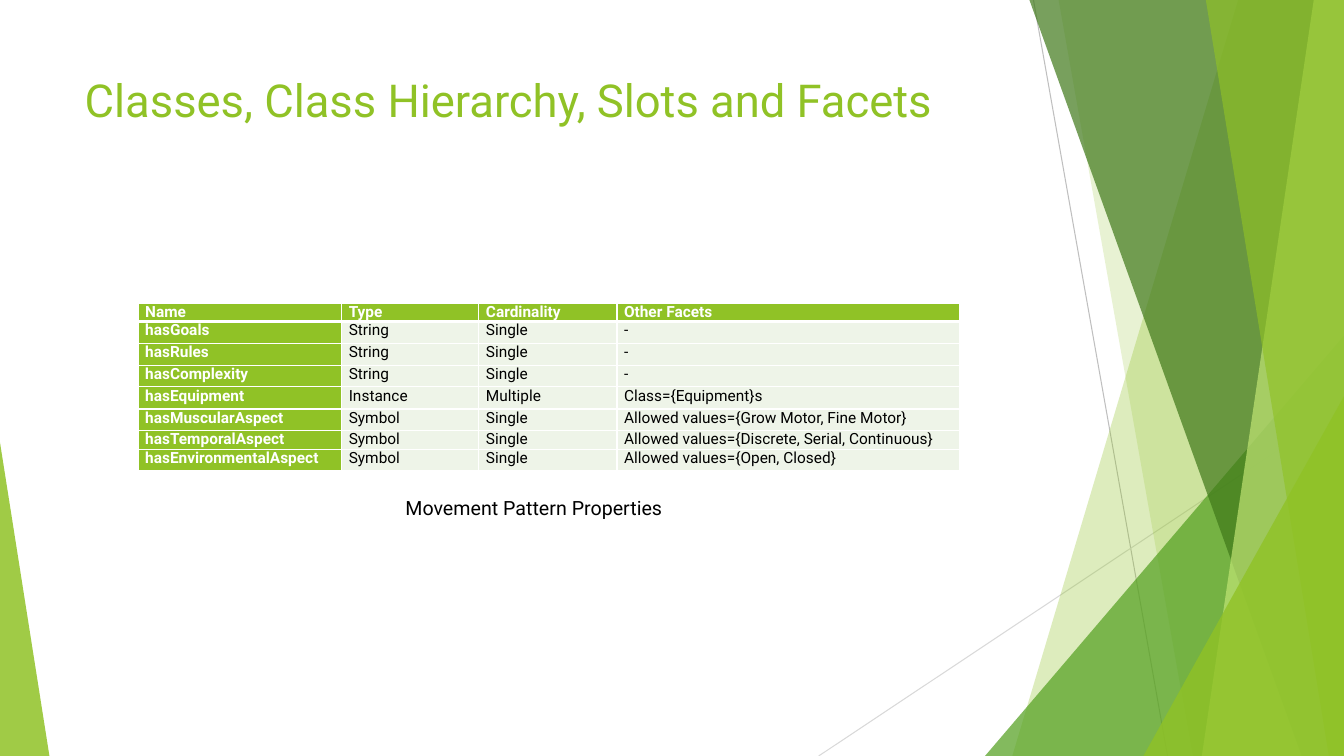
from dataclasses import dataclass

from lxml.etree import SubElement
from pptx import Presentation
from pptx.dml.color import RGBColor
from pptx.enum.shapes import MSO_CONNECTOR, MSO_SHAPE
from pptx.enum.text import MSO_ANCHOR, MSO_AUTO_SIZE, PP_ALIGN
from pptx.oxml.ns import qn
from pptx.slide import Slide
from pptx.table import _Cell
from pptx.text.text import _Paragraph
from pptx.util import Inches, Pt

WIDTH, HEIGHT = 13.33, 7.5
FONT = "Roboto"
GREEN, PALE, WHITE, BLACK = "90C226", "EEF4E8", "FFFFFF", "000000"


@dataclass
class Ray:
    start: tuple[float, float]
    end: tuple[float, float]
    color: str


@dataclass
class Shard:
    corners: list[tuple[float, float]]
    color: str
    opacity: int


@dataclass
class Wedge:
    left: float
    top: float
    width: float
    apex: float
    color: str
    opacity: int


RAYS = [
    Ray((10.25, 0), (11.58, HEIGHT), "BFBFBF"),
    Ray((WIDTH, 4.03), (8.12, HEIGHT), "D9D9D9"),
]


def edge_shard(top_x: float, bottom_x: float, color: str, opacity: int) -> Shard:
    """Shard between a slanted side and the right edge of the slide."""
    corners = [(top_x, 0), (WIDTH, 0), (WIDTH, HEIGHT), (bottom_x, HEIGHT)]
    return Shard(corners, color, opacity)


# Back to front
FACETS = [
    edge_shard(12.28, 10.04, GREEN, 30),
    edge_shard(10.5, 11.83, GREEN, 20),
    Wedge(9.77, 3.33, 3.56, 1, "54A021", 72),
    edge_shard(10.21, 12.91, "3F7819", 70),
    edge_shard(13.03, 11.92, "C0E474", 70),
    edge_shard(11.96, 13.18, GREEN, 65),
    Wedge(11.34, 3.93, 1.99, 1, GREEN, 80),
    Wedge(0, 4.39, 0.49, 0, GREEN, 85),
]

COLUMN_WIDTHS = [2.02, 1.36, 1.37, 3.4]
ROW_HEIGHTS = [0.17, 0.22, 0.22, 0.21, 0.22, 0.21, 0.19, 0.21]
PROPERTIES = [
    ("Name", "Type", "Cardinality", "Other Facets"),
    ("hasGoals", "String", "Single", "-"),
    ("hasRules", "String", "Single", "-"),
    ("hasComplexity", "String", "Single", "-"),
    ("hasEquipment", "Instance", "Multiple", "Class={Equipment}s"),
    ("hasMuscularAspect", "Symbol", "Single", "Allowed values={Grow Motor, Fine Motor}"),
    ("hasTemporalAspect", "Symbol", "Single", "Allowed values={Discrete, Serial, Continuous}"),
    ("hasEnvironmentalAspect", "Symbol", "Single", "Allowed values={Open, Closed}"),
]


def rgb(color: str) -> RGBColor:
    return RGBColor.from_string(color)


def format_text(paragraph: _Paragraph, size: float, color: str,
                align: PP_ALIGN, bold: bool = False) -> None:
    paragraph.alignment = align
    for run in paragraph.runs:
        run.font.name = FONT
        run.font.size = Pt(size)
        run.font.bold = bold
        run.font.color.rgb = rgb(color)


def draw_ray(slide: Slide, ray: Ray) -> None:
    points = [Inches(value) for value in (*ray.start, *ray.end)]
    connector = slide.shapes.add_connector(MSO_CONNECTOR.STRAIGHT, *points)
    connector.line.color.rgb = rgb(ray.color)
    connector.line.width = Pt(0.75)
    SubElement(connector._element.spPr, qn("a:effectLst"))


def draw_facet(slide: Slide, facet: Shard | Wedge) -> None:
    if isinstance(facet, Shard):
        corners = [(Inches(x), Inches(y)) for x, y in facet.corners]
        builder = slide.shapes.build_freeform(*corners[0])
        builder.add_line_segments(corners[1:], close=True)
        shape = builder.convert_to_shape()
    else:
        shape = slide.shapes.add_shape(
            MSO_SHAPE.ISOSCELES_TRIANGLE, Inches(facet.left), Inches(facet.top),
            Inches(facet.width), Inches(HEIGHT - facet.top))
        shape.adjustments[0] = facet.apex
    shape.shadow.inherit = False
    shape.line.fill.background()
    shape.fill.solid()
    shape.fill.fore_color.rgb = rgb(facet.color)
    tint = shape._element.spPr.find(qn("a:solidFill"))[0]
    SubElement(tint, qn("a:alpha"), val=str(facet.opacity * 1000))


def set_borders(cell: _Cell, top: float, bottom: float) -> None:
    properties = cell._tc.get_or_add_tcPr()
    for side, width in (("L", 1), ("R", 1), ("T", top), ("B", bottom)):
        border = SubElement(properties, qn(f"a:ln{side}"), w=str(Pt(width)))
        fill = SubElement(border, qn("a:solidFill"))
        SubElement(fill, qn("a:srgbClr"), val=WHITE)


def draw_properties(slide: Slide) -> None:
    table = slide.shapes.add_table(
        len(PROPERTIES), len(COLUMN_WIDTHS), Inches(1.37), Inches(3.01),
        Inches(sum(COLUMN_WIDTHS)), Inches(sum(ROW_HEIGHTS))).table
    table.horz_banding = False
    for column, width in zip(table.columns, COLUMN_WIDTHS):
        column.width = Inches(width)
    for r, (height, values) in enumerate(zip(ROW_HEIGHTS, PROPERTIES)):
        table.rows[r].height = Inches(height)
        for c, value in enumerate(values):
            cell = table.cell(r, c)
            heading = r == 0 or c == 0
            cell.margin_left = cell.margin_right = Inches(0.07)
            cell.margin_top = cell.margin_bottom = 0
            set_borders(cell, top=3 if r == 1 else 1, bottom=3 if r == 0 else 1)
            cell.fill.solid()
            cell.fill.fore_color.rgb = rgb(GREEN if heading else PALE)
            cell.text_frame.text = value
            format_text(cell.text_frame.paragraphs[0], 11,
                        WHITE if heading else BLACK, PP_ALIGN.JUSTIFY, heading)


def draw_title(slide: Slide) -> None:
    title = slide.shapes.title
    title.left, title.top = Inches(0.74), Inches(0.67)
    title.width, title.height = Inches(9.4), Inches(1.44)
    frame = title.text_frame
    frame.text = "Classes, Class Hierarchy, Slots and Facets"
    frame.word_wrap = True
    frame.auto_size = MSO_AUTO_SIZE.NONE
    frame.vertical_anchor = MSO_ANCHOR.TOP
    format_text(frame.paragraphs[0], 32.4, GREEN, PP_ALIGN.LEFT)


def draw_caption(slide: Slide) -> None:
    caption = slide.shapes.add_textbox(
        Inches(1.97), Inches(4.87), Inches(6.65), Inches(0.34))
    frame = caption.text_frame
    frame.word_wrap = True
    frame.auto_size = MSO_AUTO_SIZE.SHAPE_TO_FIT_TEXT
    frame.text = "Movement Pattern Properties"
    format_text(frame.paragraphs[0], 14, BLACK, PP_ALIGN.CENTER)


def main() -> None:
    presentation = Presentation()
    presentation.slide_width = Inches(WIDTH)
    presentation.slide_height = Inches(HEIGHT)
    slide = presentation.slides.add_slide(presentation.slide_layouts[5])

    # Background decoration
    for ray in RAYS:
        draw_ray(slide, ray)
    for facet in FACETS:
        draw_facet(slide, facet)

    # Content
    draw_title(slide)
    draw_properties(slide)
    draw_caption(slide)
    presentation.save("out.pptx")


if __name__ == "__main__":
    main()
